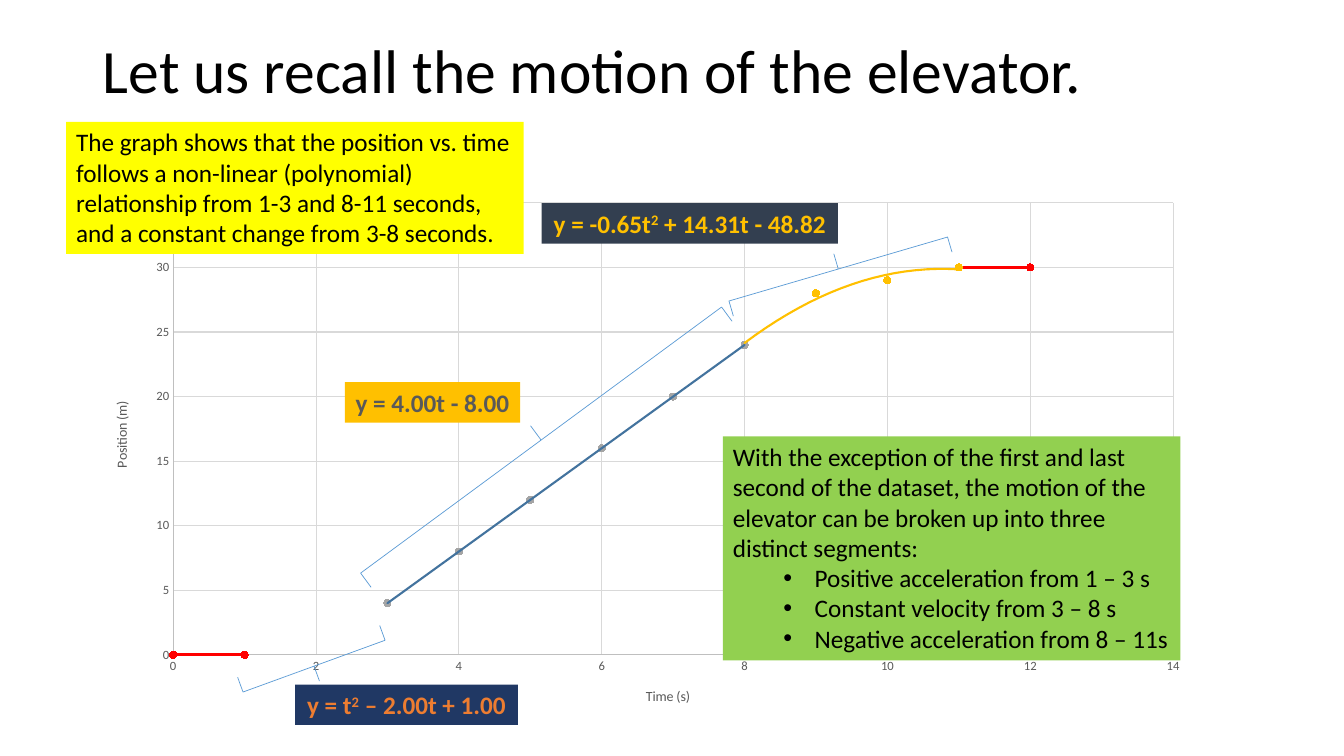
from dataclasses import dataclass

from lxml.etree import SubElement
from pptx import Presentation
from pptx.chart.data import XyChartData
from pptx.dml.color import RGBColor
from pptx.enum.chart import XL_CHART_TYPE as ChartType, XL_MARKER_STYLE as Marker
from pptx.enum.chart import XL_TICK_MARK as TickMark
from pptx.enum.shapes import MSO_SHAPE as Preset
from pptx.enum.text import MSO_ANCHOR as Anchor, MSO_AUTO_SIZE as AutoSize, PP_ALIGN as Align
from pptx.oxml import parse_xml
from pptx.oxml.ns import nsdecls, qn
from pptx.util import Cm, Pt


@dataclass(frozen=True)
class Theme:
    font: str = "Calibri"
    title_size: float = 44
    text_size: float = 18
    axis_title_size: float = 10
    axis_size: float = 9
    black: str = "000000"
    grey: str = "595959"
    axis_line: str = "BFBFBF"
    grid: str = "D9D9D9"
    yellow: str = "FFFF00"
    green: str = "92D050"
    gold: str = "FFC000"
    orange: str = "ED7D31"
    slate: str = "333F50"
    navy: str = "203864"
    silver: str = "A5A5A5"
    steel: str = "43739E"
    brace: str = "5B9BD5"
    red: str = "FF0000"


THEME = Theme()

TITLE = "Let us recall the motion of the elevator."
TITLE_BOX = (2.34, 0.02, 29.21, 3.68)
CHART_BOX = (2.35, 4.65, 27.97, 13.64)
PLOT_AREA = {"x": 0.072, "y": 0.034, "w": 0.901, "h": 0.835}

# Each axis: title, maximum, step
TIME_AXIS = ("Time (s)", 14, 2)
POSITION_AXIS = ("Position (m)", 35, 5)

SERIES = [
    dict(first_second=1, positions=[0, 1, 4], marker=THEME.orange, trend=("poly", THEME.orange)),
    dict(first_second=3, positions=[4, 8, 12, 16, 20, 24], marker=THEME.silver,
         trend=("linear", THEME.steel)),
    dict(first_second=8, positions=[24, 28, 29, 30], marker=THEME.gold,
         trend=("poly", THEME.gold)),
    dict(first_second=0, positions=[0, 0], marker=THEME.red, line_width=2.25),
    dict(first_second=11, positions=[30, 30], marker=THEME.red, line_width=2),
]

SEGMENTS_BOX = (18.22, 11, 11.53, 5.64)
SEGMENTS_INTRO = ("With the exception of the first and last second of the dataset, the motion "
                  "of the elevator can be broken up into three distinct segments:")
SEGMENTS = ["Positive acceleration from 1 – 3 s",
            "Constant velocity from 3 – 8 s",
            "Negative acceleration from 8 – 11s"]

# The middle part of a three-part equation is an exponent
EQUATIONS = [
    dict(parts=["y = -0.65t", "2", " + 14.31t - 48.82"], box=(13.65, 5.12, 7.47, 1.02),
         fill=THEME.slate, color=THEME.gold, brace=(20.73, 3.91, 0.79, 5.74), rotation=73.7),
    dict(parts=["y = 4.00t - 8.00"], box=(8.69, 9.63, 4.42, 1.02),
         fill=THEME.gold, color=THEME.grey, brace=(13.19, 5.44, 0.89, 11.3), rotation=53.6),
    dict(parts=["y = t", "2", " – 2.00t + 1.00"], box=(7.44, 17.25, 5.61, 1.02),
         fill=THEME.navy, color=THEME.orange, brace=(7.52, 14.88, 0.79, 3.81), rotation=250),
]

GRAPH_NOTE_BOX = (1.67, 3.07, 11.53, 3.33)
GRAPH_NOTE = ("The graph shows that the position vs. time follows a non-linear (polynomial) "
              "relationship from 1-3 and 8-11 seconds, and a constant change from 3-8 seconds.")


def lengths(box):
    return [Cm(value) for value in box]


def rgb(color):
    return RGBColor.from_string(color)


def style_font(font, size, color, bold=False):
    font.name, font.size, font.bold = THEME.font, Pt(size), bold
    font.color.rgb = rgb(color)


def style_line(line, color, width):
    line.color.rgb = rgb(color)
    line.width = Pt(width)


def write_text(paragraph, parts, size=THEME.text_size, color=THEME.black, bold=False,
               align=Align.LEFT, bullet=False):
    """Fill a paragraph with runs; every second run is raised."""
    paragraph.alignment = align
    for index, part in enumerate(parts):
        run = paragraph.add_run()
        run.text = part
        style_font(run.font, size, color, bold)
        if index % 2:
            run.font._element.set("baseline", "30000")
    if bullet:
        paragraph.level = 1
        properties = paragraph._p.get_or_add_pPr()
        properties.set("marL", str(Cm(2.06)))
        properties.set("indent", str(-Cm(0.79)))
        SubElement(properties, qn("a:buFont"), typeface="Arial")
        SubElement(properties, qn("a:buChar"), char="•")


def add_box(shapes, box, fill, wrap=True):
    shape = shapes.add_shape(Preset.RECTANGLE, *lengths(box))
    shape.shadow.inherit = False
    shape.fill.solid()
    shape.fill.fore_color.rgb = rgb(fill)
    shape.line.fill.background()
    frame = shape.text_frame
    frame.word_wrap = wrap
    frame.auto_size = AutoSize.SHAPE_TO_FIT_TEXT
    frame.vertical_anchor = Anchor.TOP
    return frame


def add_equation(shapes, parts, box, fill, color, brace, rotation):
    group = shapes.add_group_shape()
    frame = add_box(group.shapes, box, fill, wrap=False)
    write_text(frame.paragraphs[0], parts, color=color, bold=True, align=Align.CENTER)
    shape = group.shapes.add_shape(Preset.LEFT_BRACE, *lengths(brace))
    shape.shadow.inherit = False
    shape.adjustments[0], shape.adjustments[1] = 0, 0.5
    shape.rotation = rotation
    shape.fill.background()
    style_line(shape.line, THEME.brace, 0.5)


def style_axis(axis, title, maximum, step):
    axis.minimum_scale, axis.maximum_scale, axis.major_unit = 0, maximum, step
    axis.major_tick_mark = axis.minor_tick_mark = TickMark.NONE
    axis.has_major_gridlines = True
    style_line(axis.major_gridlines.format.line, THEME.grid, 0.75)
    style_line(axis.format.line, THEME.axis_line, 0.75)
    style_font(axis.tick_labels.font, THEME.axis_size, THEME.grey)
    write_text(axis.axis_title.text_frame.paragraphs[0], [title], size=THEME.axis_title_size,
               color=THEME.grey, align=Align.CENTER)


def add_trendline(series, kind, color):
    order = '<c:order val="2"/>' if kind == "poly" else ""
    trendline = parse_xml(
        f'<c:trendline {nsdecls("c", "a")}><c:spPr><a:ln w="{Pt(1.5)}" cap="rnd"><a:solidFill>'
        f'<a:srgbClr val="{color}"/></a:solidFill></a:ln></c:spPr>'
        f'<c:trendlineType val="{kind}"/>{order}'
        '<c:dispRSqr val="0"/><c:dispEq val="0"/></c:trendline>')
    series._element.find(qn("c:xVal")).addprevious(trendline)


def fix_plot_area(chart):
    plot_area = chart._chartSpace.chart.plotArea
    for layout in plot_area.findall(qn("c:layout")):
        plot_area.remove(layout)
    sizes = "".join(f'<c:{key} val="{value}"/>' for key, value in PLOT_AREA.items())
    plot_area.insert(0, parse_xml(
        f'<c:layout {nsdecls("c")}><c:manualLayout><c:layoutTarget val="inner"/>'
        f'<c:xMode val="edge"/><c:yMode val="edge"/>{sizes}</c:manualLayout></c:layout>'))


def add_motion_chart(shapes):
    data = XyChartData()
    for number, segment in enumerate(SERIES, 1):
        series = data.add_series(f"Series {number}")
        for second, position in enumerate(segment["positions"], segment["first_second"]):
            series.add_data_point(second, position)
    chart = shapes.add_chart(ChartType.XY_SCATTER, *lengths(CHART_BOX), data).chart
    chart.has_legend = chart.has_title = False
    style_font(chart.font, THEME.axis_title_size, THEME.black)
    chart.plots[0].vary_by_categories = False
    style_axis(chart.category_axis, *TIME_AXIS)
    style_axis(chart.value_axis, *POSITION_AXIS)
    fix_plot_area(chart)
    for series, segment in zip(chart.plots[0].series, SERIES):
        series.smooth = False
        marker = series.marker
        marker.style, marker.size = Marker.CIRCLE, 5
        marker.format.fill.solid()
        marker.format.fill.fore_color.rgb = rgb(segment["marker"])
        style_line(marker.format.line, segment["marker"], 0.75)
        if "trend" in segment:
            series.format.line.fill.background()
            add_trendline(series, *segment["trend"])
        else:
            style_line(series.format.line, THEME.red, segment["line_width"])


def main():
    presentation = Presentation()
    presentation.slide_width, presentation.slide_height = Cm(33.87), Cm(19.05)
    slide = presentation.slides.add_slide(presentation.slide_layouts[5])
    shapes = slide.shapes

    title = shapes.title
    title.left, title.top, title.width, title.height = lengths(TITLE_BOX)
    title.text_frame.vertical_anchor = Anchor.MIDDLE
    heading = title.text_frame.paragraphs[0]
    heading.line_spacing = 0.9
    write_text(heading, [TITLE], size=THEME.title_size)

    add_motion_chart(shapes)
    frame = add_box(shapes, SEGMENTS_BOX, THEME.green)
    write_text(frame.paragraphs[0], [SEGMENTS_INTRO])
    for segment in SEGMENTS:
        write_text(frame.add_paragraph(), [segment], bullet=True)
    for equation in EQUATIONS:
        add_equation(shapes, **equation)
    note = add_box(shapes, GRAPH_NOTE_BOX, THEME.yellow)
    write_text(note.paragraphs[0], [GRAPH_NOTE])
    presentation.save("out.pptx")


if __name__ == "__main__":
    main()
